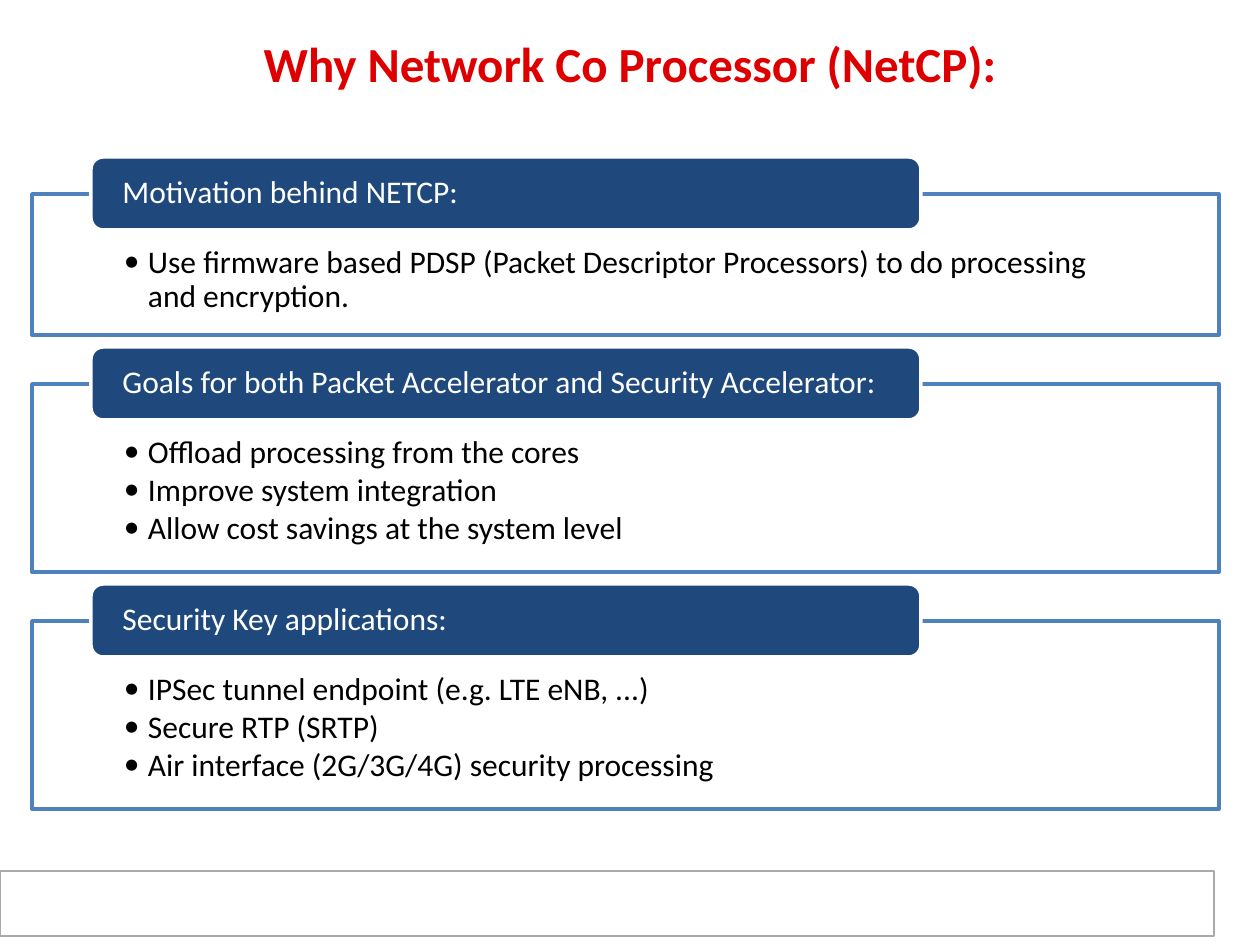
from lxml.etree import SubElement
from pptx import Presentation
from pptx.dml.color import RGBColor
from pptx.enum.shapes import MSO_SHAPE
from pptx.enum.text import MSO_ANCHOR, PP_ALIGN
from pptx.oxml.ns import qn
from pptx.util import Pt

RED = RGBColor(0xDE, 0x00, 0x00)
NAVY = RGBColor(0x1F, 0x49, 0x7D)
BLUE = RGBColor(0x4F, 0x81, 0xBD)
GREY = RGBColor(0xAA, 0xAA, 0xAA)
WHITE = RGBColor(0xFF, 0xFF, 0xFF)
BLACK = RGBColor(0x00, 0x00, 0x00)

SCALE = 914400 / 126
GAP = 49
BODY = {"name": "Calibri", "size": Pt(18), "bold": False}
HEAD = {"name": "Calibri", "size": Pt(28), "bold": True}

TOPICS = [
    ("Motivation behind NETCP:", 141, [
        "Use firmware based PDSP (Packet Descriptor Processors) to do processing and encryption.",
    ]),
    ("Goals for both Packet Accelerator and Security Accelerator:", 188, [
        "Offload processing from the cores",
        "Improve system integration",
        "Allow cost savings at the system level",
    ]),
    ("Security Key applications:", 188, [
        "IPSec tunnel endpoint (e.g. LTE eNB, ...)",
        "Secure RTP (SRTP)",
        "Air interface (2G/3G/4G) security processing",
    ]),
]


def px(n):
    """Turn px into EMU."""
    return round(n * SCALE)


def assign(obj, values):
    """Set each attribute of obj from a dict."""
    for key, value in values.items():
        setattr(obj, key, value)


def block(slide, kind, box, fill, edge, width):
    """Add a filled and outlined shape."""
    shape = slide.shapes.add_shape(kind, *map(px, box))
    shape.shadow.inherit = False
    shape.fill.solid()
    shape.fill.fore_color.rgb = fill
    shape.line.color.rgb = edge
    shape.line.width = Pt(width)
    return shape


def write(shape, lines, font, ink, frame, para, bullet=False):
    """Fill a shape with formatted paragraphs."""
    text = shape.text_frame
    assign(text, {"word_wrap": True, **frame})
    text.text = "\n".join(lines)
    for item in text.paragraphs:
        assign(item, para)
        if bullet:
            props = item._p.get_or_add_pPr()
            props.set("marL", str(px(24)))
            props.set("indent", str(px(-24)))
            SubElement(props, qn("a:buFont")).set("typeface", "Calibri")
            SubElement(props, qn("a:buChar")).set("char", "•")
        assign(item.font, font)
        item.font.color.rgb = ink


def title(slide, box):
    """Place the slide title."""
    shape = slide.shapes.add_textbox(*map(px, box))
    write(shape, ["Why Network Co Processor (NetCP):"], HEAD, RED,
          {"vertical_anchor": MSO_ANCHOR.MIDDLE}, {"alignment": PP_ALIGN.CENTER})


def topic(slide, box, name, lines):
    """Place an outlined panel of bullets with its name tab."""
    left, top, width, height = box
    panel = block(slide, MSO_SHAPE.RECTANGLE, box, WHITE, BLUE, 2)
    tint = panel.fill._xPr.find(qn("a:solidFill"))[0]
    SubElement(tint, qn("a:alpha")).set("val", "90000")
    write(panel, lines, BODY, BLACK,
          {"vertical_anchor": MSO_ANCHOR.TOP, "margin_left": px(92),
           "margin_right": px(92), "margin_top": px(52), "margin_bottom": px(18)},
          {"alignment": PP_ALIGN.LEFT, "line_spacing": 0.9, "space_after": Pt(2.3)},
          bullet=True)
    tab = block(slide, MSO_SHAPE.ROUNDED_RECTANGLE,
                (left + 59, top - 37, 830, 73), NAVY, WHITE, 2)
    write(tab, [name], BODY, WHITE,
          {"vertical_anchor": MSO_ANCHOR.MIDDLE, "margin_left": px(28),
           "margin_right": px(28), "margin_top": 0, "margin_bottom": 0},
          {"alignment": PP_ALIGN.LEFT, "line_spacing": 0.9})


def stack(slide, box):
    """Place the topics one below another."""
    left, top, width = box
    for name, height, lines in TOPICS:
        topic(slide, (left, top, width, height), name, lines)
        top += height + GAP


def footer(slide, box):
    """Place the empty footer bar."""
    block(slide, MSO_SHAPE.RECTANGLE, box, WHITE, GREY, 0.75)


def main():
    """Build and save the slide."""
    deck = Presentation()
    assign(deck, {"slide_width": px(1260), "slide_height": px(945)})
    slide = deck.slides.add_slide(deck.slide_layouts[6])
    footer(slide, (0, 871, 1214, 65))
    title(slide, (63, 10, 1134, 105))
    stack(slide, (32, 194, 1187))
    deck.save("out.pptx")


if __name__ == "__main__":
    main()
